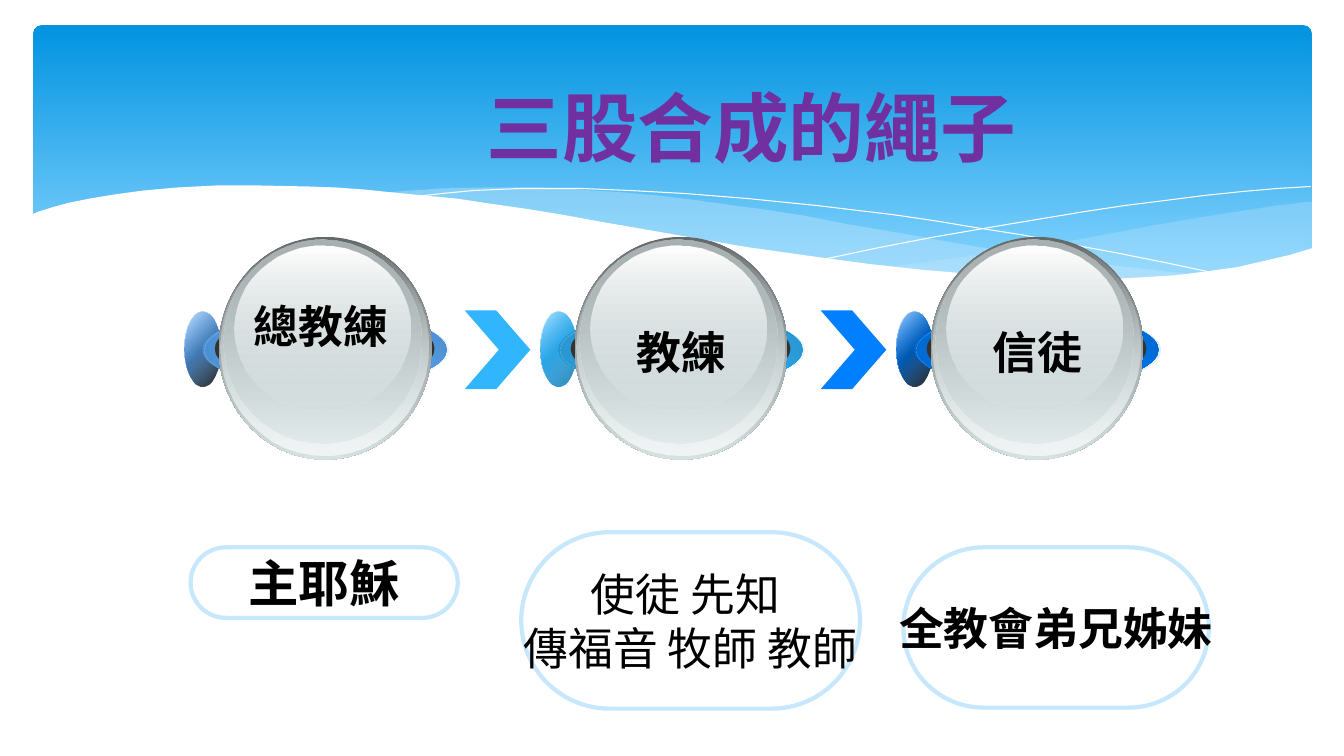
from dataclasses import dataclass

from lxml import etree
from pptx import Presentation
from pptx.dml.color import RGBColor
from pptx.enum.shapes import MSO_SHAPE
from pptx.enum.text import MSO_ANCHOR, MSO_AUTO_SIZE, PP_ALIGN
from pptx.oxml.ns import qn
from pptx.util import Inches, Pt

ELLIPSE, CHEVRON, ROUND = MSO_SHAPE.OVAL, MSO_SHAPE.CHEVRON, MSO_SHAPE.ROUNDED_RECTANGLE
MIDDLE, TOP = MSO_ANCHOR.MIDDLE, MSO_ANCHOR.TOP
CENTER = PP_ALIGN.CENTER
GROW = MSO_AUTO_SIZE.SHAPE_TO_FIT_TEXT


@dataclass(frozen=True)
class Theme:
    white: str = "FFFFFF"
    black: str = "000000"
    title: str = "7030A0"
    sky_top: str = "0293E0"
    sky_bottom: str = "83D3FE"
    pale: str = "C6E7FC"
    silver: str = "D6E1E2"
    silver_light: str = "F1F5F5"
    silver_mid: str = "AAB2B3"
    silver_dark: str = "636869"
    hub: str = "333333"
    chevrons: tuple = ("31B6FD", "0080FF")
    # Spindle colour, plate end (colour, opacity), rim, glow
    axles: tuple = (
        ("5EAEFF", ("000000", 90), "4885C3", "4D8FD1"),
        ("31B6FD", ("2382B5", 100), "268BC2", "2895D0"),
        ("0080FF", ("000000", 90), "0062C3", "0069D1"))
    title_size: int = 54
    large_size: int = 36
    body_size: int = 32
    title_font: str = "Calibri"
    body_font: str = "Arial"
    plain_font: str = "DejaVu Sans"


T = Theme()

# Wave outlines of the header, as x, y in inches
RIGHT_WAVE = [
    (13, 2), (12.65, 2.04), (12.27, 2.1), (11.88, 2.16), (11.47, 2.23), (10.73, 2.37),
    (10.04, 2.48), (9.41, 2.57), (8.82, 2.65), (9.21, 2.69), (9.58, 2.73), (9.93, 2.75),
    (10.25, 2.77), (10.71, 2.78), (11.13, 2.77), (11.5, 2.75), (11.86, 2.72),
    (12.17, 2.67), (12.47, 2.62), (12.66, 2.57), (13.01, 2.47), (13.01, 2)]
MIDDLE_WAVE = [
    (11.9, 2.73), (11.54, 2.69), (10.76, 2.6), (10.33, 2.54), (9.89, 2.48), (9.41, 2.4),
    (8.91, 2.31), (8.38, 2.22), (7.98, 2.14), (7.59, 2.08), (7.21, 2.03), (6.86, 1.98),
    (6.52, 1.94), (6.19, 1.91), (5.89, 1.89), (5.6, 1.87), (5.32, 1.86), (4.82, 1.86),
    (4.37, 1.87), (3.82, 1.91), (4.31, 1.96), (4.83, 2.03), (5.39, 2.11), (5.99, 2.22),
    (6.54, 2.32), (7.06, 2.4), (7.55, 2.48), (8.02, 2.55), (8.46, 2.61), (8.87, 2.66),
    (9.26, 2.7), (9.63, 2.74), (9.98, 2.76), (10.3, 2.78), (10.76, 2.79), (11.17, 2.78),
    (11.56, 2.76)]
FALLING_LINE = [
    (4.12, 1.95), (4.38, 1.92), (4.7, 1.89), (5.16, 1.87), (5.77, 1.87), (6.25, 1.89),
    (6.8, 1.92), (7.42, 1.97), (8.11, 2.04), (8.86, 2.13), (9.27, 2.19), (9.69, 2.26),
    (10.14, 2.33), (10.6, 2.42), (11.08, 2.51), (11.58, 2.61), (12.1, 2.72)]
RISING_LINE = [
    (8.18, 2.57), (8.7, 2.46), (9.27, 2.35), (9.97, 2.23), (10.75, 2.1), (11.15, 2.04),
    (11.55, 1.99), (11.94, 1.94), (12.32, 1.9), (12.67, 1.87), (13, 1.85)]
WHITE_WAVE = [
    (13.02, 2.46), (12.79, 2.53), (12.53, 2.59), (12.27, 2.65), (11.98, 2.69),
    (11.67, 2.73), (11.34, 2.75), (10.97, 2.77), (10.58, 2.76), (10.15, 2.75),
    (9.68, 2.72), (9.18, 2.68), (8.63, 2.62), (8.04, 2.54), (7.4, 2.45), (6.71, 2.33),
    (5.96, 2.2), (5.58, 2.13), (5.21, 2.07), (4.86, 2.02), (4.53, 1.97), (4.21, 1.94),
    (3.9, 1.91), (3.61, 1.88), (3.33, 1.86), (3.06, 1.85), (2.58, 1.84), (2.14, 1.84),
    (1.76, 1.86), (1.42, 1.89), (1.13, 1.93), (0.89, 1.97), (0.69, 2.01), (0.54, 2.05),
    (0.38, 2.1), (0.31, 2.13), (0.31, 3.29), (13.03, 3.29), (13.03, 2.46)]


def set_all(obj, fmt):
    for name, value in fmt.items():
        setattr(obj, name, value)


def add_color(parent, color, opacity=100):
    clr = etree.SubElement(parent, qn("a:srgbClr"), val=color)
    if opacity < 100:
        etree.SubElement(clr, qn("a:alpha"), val=str(opacity * 1000))


class SlideBuilder:
    def __init__(self, prs, theme):
        self.theme = theme
        self.s = prs.slides.add_slide(prs.slide_layouts[6])

    def paint(self, sp, fill=None, angle=0, line=None, reach=100):
        """fill: evenly spaced (color[, opacity]) stops up to reach percent; line: (color, points)."""
        props = sp._element.spPr
        if not fill:
            sp.fill.background()
        elif len(fill) == 1:
            add_color(etree.SubElement(props, qn("a:solidFill")), *fill[0])
        else:
            grad = etree.SubElement(props, qn("a:gradFill"), rotWithShape="1")
            stops = etree.SubElement(grad, qn("a:gsLst"))
            for i, stop in enumerate(fill):
                pos = round(reach * 1000 * i / (len(fill) - 1))
                add_color(etree.SubElement(stops, qn("a:gs"), pos=str(pos)), *stop)
            etree.SubElement(grad, qn("a:lin"), ang=str(angle * 60000), scaled="0")
        if line:
            sp.line.color.rgb = RGBColor.from_string(line[0])
            sp.line.width = Pt(line[1])
        else:
            sp.line.fill.background()
        sp.shadow.inherit = False

    def shape(self, kind, box, fill=None, angle=0, line=None, adj=None, reach=100):
        sp = self.s.shapes.add_shape(kind, *map(Inches, box))
        if adj is not None:
            sp.adjustments[0] = adj
        self.paint(sp, fill, angle, line, reach)
        return sp

    def wave(self, points, fill=None, line=None):
        pts = [(Inches(x), Inches(y)) for x, y in points]
        builder = self.s.shapes.build_freeform(*pts[0])
        builder.add_line_segments(pts[1:], close=bool(fill))
        self.paint(builder.convert_to_shape(), fill, line=line)

    def put_text(self, sp, lines, size, font, color, bold=True, **frame):
        tf = sp.text_frame
        set_all(tf, {"word_wrap": False, "vertical_anchor": MIDDLE, **frame})
        for i, text in enumerate(lines):
            p = tf.add_paragraph() if i else tf.paragraphs[0]
            p.alignment = CENTER
            r = p.add_run()
            r.text = text
            set_all(r.font, {"size": Pt(size), "name": font, "bold": bold})
            r.font.color.rgb = RGBColor.from_string(color)

    def label(self, box, text, size, font, color, **frame):
        sp = self.s.shapes.add_textbox(*map(Inches, box))
        self.put_text(sp, [text], size, font, color, **frame)

    def axle(self, x, color, plate_end, rim, glow):
        """Blue spindle seen on both sides of a ball."""
        t = self.theme
        plate = (x, 3.09, 0.36, 0.74)
        self.shape(ELLIPSE, plate, [(t.white,), (color,), (t.white,)], 45)
        self.shape(ELLIPSE, plate, [(color, 32), plate_end], 45)
        self.shape(ELLIPSE, (x + 0.18, 3.1, 2.42, 0.74), [(rim,), (color,), (rim,)], 315)
        self.shape(ELLIPSE, (x + 0.2, 3.1, 2.42, 0.74), [(glow,), (color, 0)], 45)
        self.shape(ELLIPSE, (x + 0.3, 3.09, 2.18, 0.74), [(t.hub,)])

    def ball(self, x):
        t = self.theme
        layers = [
            (0.34, 2.35, 2.11, 2.21, (t.silver_dark,), (t.silver,)),
            (0.36, 2.36, 2.06, 2.16, (t.silver, 0), (t.silver_light,)),
            (0.39, 2.38, 1.96, 2.02, (t.silver_mid,), (t.silver, 48)),
            (0.5, 2.44, 1.74, 1.64, (t.white,), (t.silver, 38))]
        for dx, y, w, h, top, bottom in layers:
            self.shape(ELLIPSE, (x + dx, y, w, h), [top, bottom], 90)


def main():
    prs = Presentation()
    set_all(prs, {"slide_width": Inches(13.33), "slide_height": Inches(7.5)})
    b = SlideBuilder(prs, T)

    b.shape(ROUND, (0.33, 0.25, 12.68, 2.7), [(T.sky_top,), (T.sky_bottom,)], 90,
            adj=0.03, reach=90)
    b.wave(RIGHT_WAVE, [(T.pale, 29)])
    b.wave(MIDDLE_WAVE, [(T.pale, 40)])
    for curve in (FALLING_LINE, RISING_LINE):
        b.wave(curve, line=(T.white, 0))
    b.wave(WHITE_WAVE, [(T.white,)])
    b.label((3.51, 0.44, 7.88, 1.62), "三股合成的繩子", T.title_size, T.title_font, T.title,
            word_wrap=True)

    left, pitch = 1.83, 3.53
    for i, color in enumerate(T.chevrons):
        b.shape(CHEVRON, (4.61 + i * pitch, 3.08, 0.65, 0.78), [(color,)], adj=0.52)
    for i, colors in enumerate(T.axles):
        b.axle(left + i * pitch, *colors)
        b.ball(left + i * pitch)

    people = [
        ((1.89, 5.43, 2.65, 0.7), ["主耶穌"], T.large_size, T.body_font, True),
        ((5.17, 5.28, 3.36, 1.75), ["使徒 先知 ", "傳福音 牧師 教師"], T.body_size, T.plain_font, False),
        ((8.96, 5.43, 3.03, 1.59), ["全教會弟兄姊妹"], T.body_size, T.body_font, True)]
    for box, lines, size, font, bold in people:
        sp = b.shape(ROUND, box, line=(T.pale, 3), adj=0.5)
        b.put_text(sp, lines, size, font, T.black, bold)

    roles = [
        ((2, 2.91, 2.37, 0.84), "總教練", True),
        ((6.07, 3.17, 1.38, 0.84), "教練", False),
        ((9.6, 3.17, 1.38, 0.84), "信徒", False)]
    for box, text, wrap in roles:
        b.label(box, text, T.body_size, T.body_font, T.black,
                word_wrap=wrap, vertical_anchor=TOP, auto_size=GROW)

    prs.save("out.pptx")


if __name__ == "__main__":
    main()
